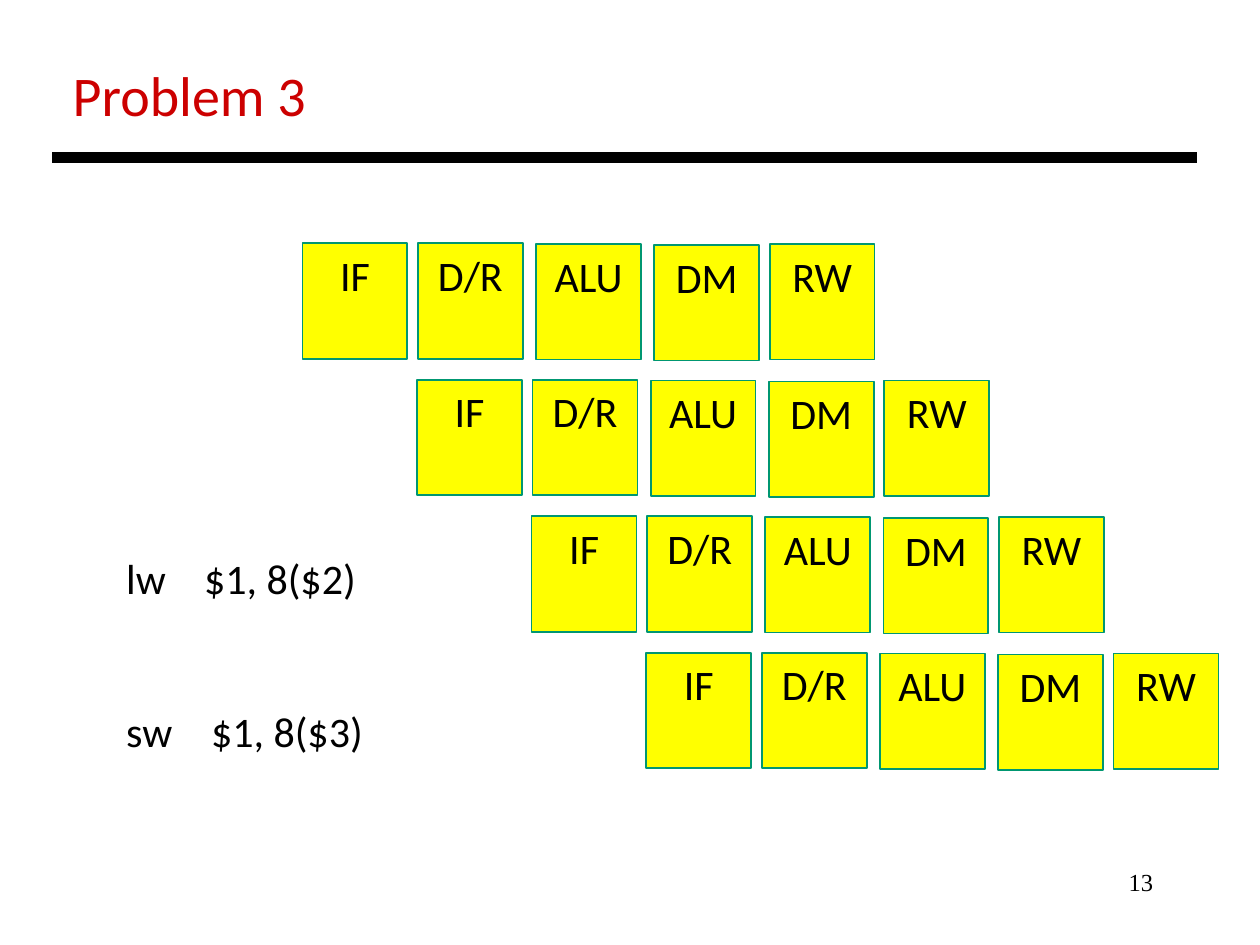
from dataclasses import dataclass

from lxml import etree
from pptx import Presentation
from pptx.dml.color import RGBColor
from pptx.enum.shapes import MSO_CONNECTOR, MSO_SHAPE
from pptx.enum.text import PP_ALIGN
from pptx.oxml.ns import qn
from pptx.util import Pt

LEFT, CENTER, RIGHT = PP_ALIGN.LEFT, PP_ALIGN.CENTER, PP_ALIGN.RIGHT
RECTANGLE = MSO_SHAPE.RECTANGLE
STRAIGHT = MSO_CONNECTOR.STRAIGHT


@dataclass(frozen=True)
class Theme:
    text: RGBColor = RGBColor(0, 0, 0)
    title: RGBColor = RGBColor(0xCC, 0, 0)
    stage_fill: RGBColor = RGBColor(0xFF, 0xFF, 0)
    stage_line: RGBColor = RGBColor(0, 0x97, 0x71)
    font: str = "Calibri"
    number_font: str = "Times New Roman"
    title_size: float = 32
    body_size: float = 24
    number_size: float = 14


@dataclass(frozen=True)
class Stage:
    label: str
    offset: float  # from the left of the first stage
    drop: float = 0


@dataclass(frozen=True)
class Instruction:
    name: str
    operands: str
    tab: float
    gap: float = 0


THEME = Theme()
STAGES = [
    Stage("IF", 0),
    Stage("D/R", 66),
    Stage("ALU", 133.5, 0.5),
    Stage("DM", 201, 1),
    Stage("RW", 267, 0.5),
]
INSTRUCTIONS = [
    Instruction("lw", "$1, 8($2)", 44.5),
    Instruction("sw", "$1, 8($3)", 48.5, gap=58.6),
]
ROWS = 4
FIRST_LEFT, FIRST_TOP = 172.8, 139
ROW_SHIFT, ROW_PITCH = 65.5, 78
STAGE_WIDTH, STAGE_HEIGHT = 60, 66


def write(para, text: str, *, size: float = THEME.body_size,
          font: str = THEME.font, color: RGBColor = THEME.text,
          align=LEFT, gap: float = 0) -> None:
    para.alignment = align
    para.space_before = Pt(gap)
    span = para.add_run()
    span.text = text
    span.font.name = font
    span.font.size = Pt(size)
    span.font.color.rgb = color


def add_text_box(page, left: float, top: float, width: float, height: float):
    frame = page.shapes.add_textbox(
        Pt(left), Pt(top), Pt(width), Pt(height)).text_frame
    frame.word_wrap = True
    return frame


def set_tab(para, position: float) -> None:
    tabs = etree.SubElement(para._p.get_or_add_pPr(), qn("a:tabLst"))
    etree.SubElement(tabs, qn("a:tab"), pos=str(Pt(position)), algn="l")


def add_rule(page, left: float, right: float, y: float) -> None:
    rule = page.shapes.add_connector(
        STRAIGHT, Pt(left), Pt(y), Pt(right), Pt(y))
    rule.line.color.rgb = THEME.text
    rule.line.width = Pt(6)
    etree.SubElement(rule._element.spPr, qn("a:effectLst"))


def add_stage(page, stage: Stage, row: int) -> None:
    box = page.shapes.add_shape(
        RECTANGLE,
        Pt(FIRST_LEFT + row * ROW_SHIFT + stage.offset),
        Pt(FIRST_TOP + row * ROW_PITCH + stage.drop),
        Pt(STAGE_WIDTH), Pt(STAGE_HEIGHT))
    box.shadow.inherit = False
    box.fill.solid()
    box.fill.fore_color.rgb = THEME.stage_fill
    box.line.color.rgb = THEME.stage_line
    box.line.width = Pt(1)
    frame = box.text_frame
    frame.vertical_anchor = MSO_TOP
    write(frame.paragraphs[0], stage.label, align=CENTER)


def add_instructions(page) -> None:
    frame = add_text_box(page, 65, 312, 157, 124)
    for index, item in enumerate(INSTRUCTIONS):
        para = frame.add_paragraph() if index else frame.paragraphs[0]
        write(para, f"{item.name}\t{item.operands}", gap=item.gap)
        set_tab(para, item.tab)


def main() -> None:
    deck = Presentation()
    deck.slide_width, deck.slide_height = Pt(720), Pt(540)
    page = deck.slides.add_slide(deck.slide_layouts[6])

    # Page number, title and rule
    number = add_text_box(page, 516, 492, 150, 36)
    write(number.paragraphs[0], "13", size=THEME.number_size,
          font=THEME.number_font, align=RIGHT)
    title = add_text_box(page, 34.5, 31, 160, 46)
    write(title.paragraphs[0], "Problem 3", size=THEME.title_size,
          color=THEME.title)
    add_rule(page, 30, 684, 90)

    # Pipeline: each row starts one stage later
    for row in range(ROWS):
        for stage in STAGES:
            add_stage(page, stage, row)

    add_instructions(page)
    deck.save("out.pptx")


# Stage labels hang from the top of their boxes
from pptx.enum.text import MSO_ANCHOR
MSO_TOP = MSO_ANCHOR.TOP

if __name__ == "__main__":
    main()
